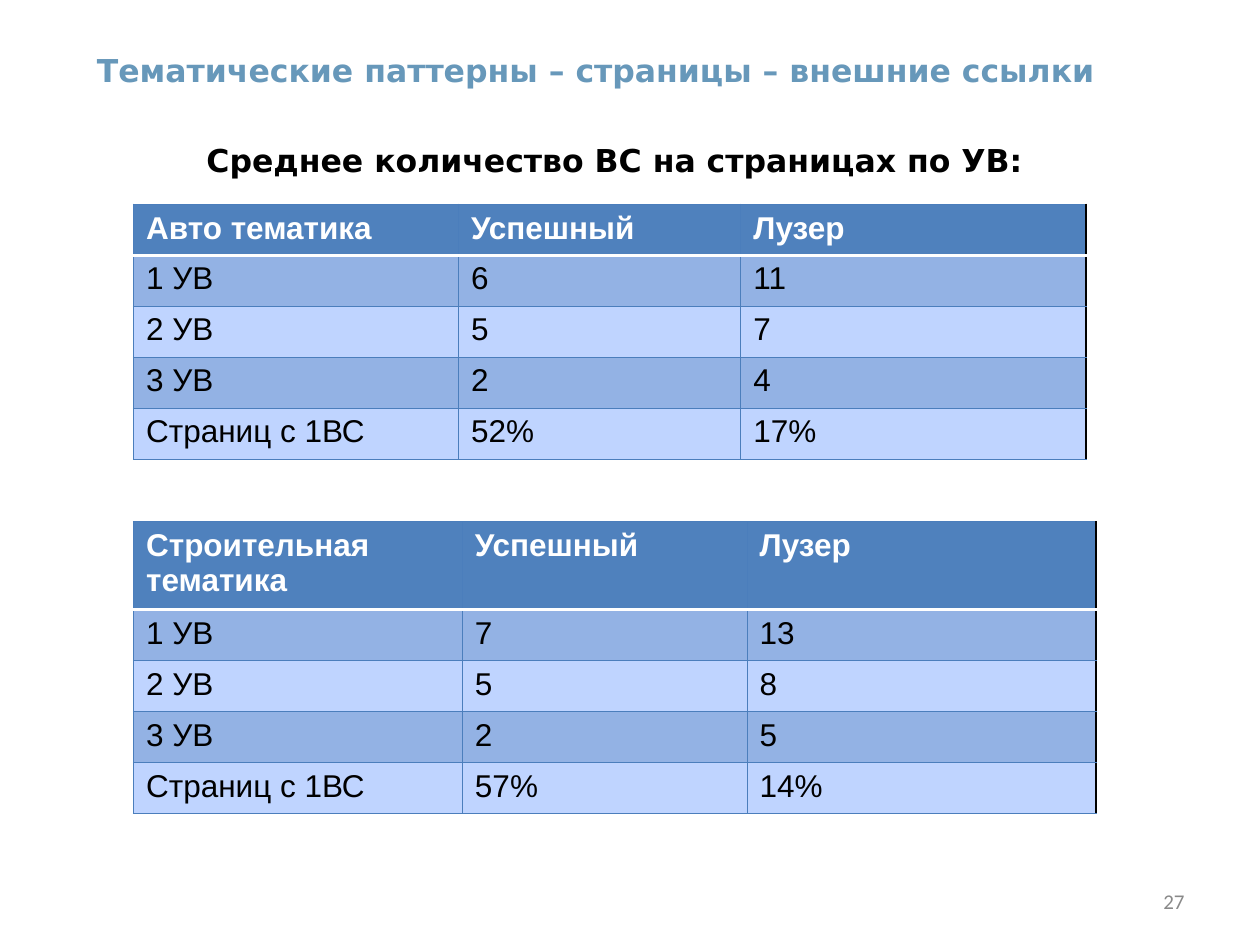
from pptx import Presentation
from pptx.dml.color import RGBColor
from pptx.enum.text import MSO_ANCHOR, PP_ALIGN
from pptx.oxml import parse_xml
from pptx.oxml.ns import nsdecls
from pptx.util import Inches, Pt

COLORS = {
    "title": "6798BA", "black": "000000", "white": "FFFFFF", "number": "898989",
    "header": "4F81BD", "dark": "93B2E4", "light": "BFD4FF", "grid": "4B7EBC",
}
HEADINGS = [
    ("Тематические паттерны – страницы – внешние ссылки", (0.67, 0.36, 8.29, 0.4), "title"),
    ("Среднее количество ВС на страницах по УВ:", (1.54, 1.07, 6.69, 0.4), "black"),
]
PAGE_NUMBER = ("27", (7.17, 6.95, 2.33, 0.4))
ROW_HEIGHT = 0.405
TABLES = [
    {"left": 1.06, "top": 1.62, "cols": (2.58, 2.24, 2.74), "header_height": ROW_HEIGHT,
     "rows": [("Авто тематика", "Успешный", "Лузер"),
              ("1 УВ", "6", "11"),
              ("2 УВ", "5", "7"),
              ("3 УВ", "2", "4"),
              ("Страниц с 1ВС", "52%", "17%")]},
    {"left": 1.06, "top": 4.14, "cols": (2.61, 2.26, 2.77), "header_height": 0.7,
     "rows": [("Строительная тематика", "Успешный", "Лузер"),
              ("1 УВ", "7", "13"),
              ("2 УВ", "5", "8"),
              ("3 УВ", "2", "5"),
              ("Страниц с 1ВС", "57%", "14%")]},
]


def write(tf, text, font="Arial", size=18, color="black", bold=False, align=PP_ALIGN.LEFT):
    p = tf.paragraphs[0]
    p.alignment = align
    r = p.add_run()
    r.text = text
    r.font.name, r.font.size, r.font.bold = font, Pt(size), bold
    r.font.color.rgb = RGBColor.from_string(COLORS[color])


def add_text(s, text, box, wrap=False, anchor=MSO_ANCHOR.TOP, **fmt):
    tf = s.shapes.add_textbox(*map(Inches, box)).text_frame
    tf.word_wrap = wrap
    tf.vertical_anchor = anchor
    write(tf, text, **fmt)


def set_borders(cell, **sides):
    """Each side (L, R, T, B) takes a colour name and a width in points."""
    tcPr = cell._tc.get_or_add_tcPr()
    for side, (color, width) in sides.items():
        tcPr.append(parse_xml(
            f'<a:ln{side} {nsdecls("a")} w="{Pt(width)}"><a:solidFill>'
            f'<a:srgbClr val="{COLORS[color]}"/></a:solidFill></a:ln{side}>'))


def add_table(s, left, top, cols, header_height, rows):
    heights = [header_height] + [ROW_HEIGHT] * (len(rows) - 1)
    table = s.shapes.add_table(len(rows), len(cols), Inches(left), Inches(top),
                               Inches(sum(cols)), Inches(sum(heights))).table
    table.first_row = table.horz_banding = False
    for column, width in zip(table.columns, cols):
        column.width = Inches(width)
    grid, rule, edge = ("grid", 0.75), ("white", 2), ("black", 1)
    for i, (row, height) in enumerate(zip(rows, heights)):
        table.rows[i].height = Inches(height)
        header = i == 0
        fill = "header" if header else "dark" if i % 2 else "light"
        for j, text in enumerate(row):
            cell = table.cell(i, j)
            set_borders(cell, L=grid, R=edge if j == len(cols) - 1 else grid,
                        T=rule if i == 1 else grid, B=rule if header else grid)
            cell.fill.solid()
            cell.fill.fore_color.rgb = RGBColor.from_string(COLORS[fill])
            write(cell.text_frame, text, color="white" if header else "black", bold=header)


def main():
    prs = Presentation()
    prs.slide_width, prs.slide_height = Inches(10), Inches(7.5)
    s = prs.slides.add_slide(prs.slide_layouts[6])
    for text, box, color in HEADINGS:
        add_text(s, text, box, font="DejaVu Sans", color=color, bold=True)
    for table in TABLES:
        add_table(s, **table)
    add_text(s, *PAGE_NUMBER, wrap=True, anchor=MSO_ANCHOR.MIDDLE,
             font="Calibri", size=12, color="number", align=PP_ALIGN.RIGHT)
    prs.save("out.pptx")


if __name__ == "__main__":
    main()
